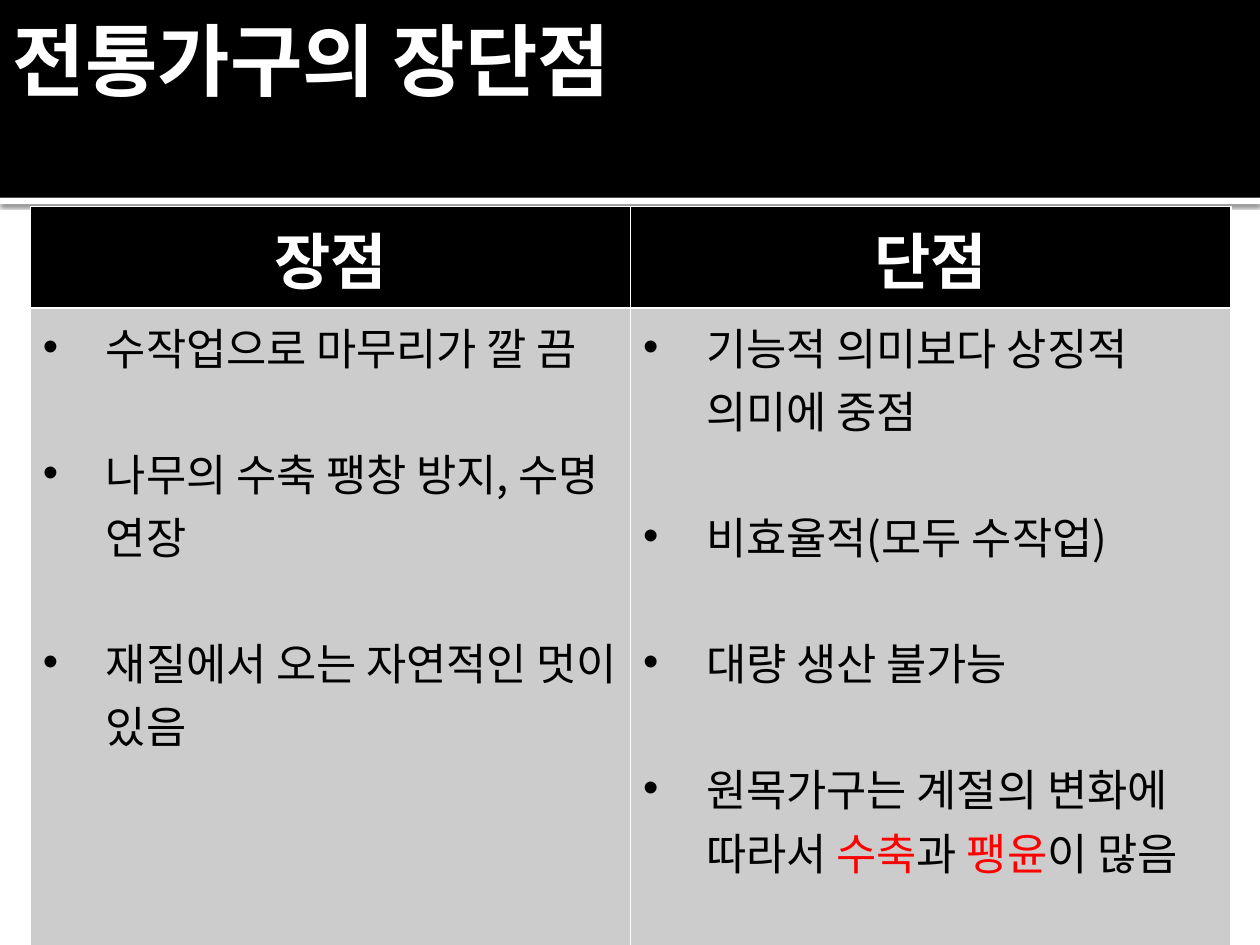
from lxml import etree
from pptx import Presentation
from pptx.dml.color import RGBColor
from pptx.enum.shapes import MSO_SHAPE
from pptx.enum.text import MSO_ANCHOR, MSO_AUTO_SIZE, PP_ALIGN
from pptx.oxml.ns import qn
from pptx.util import Inches, Pt

RECTANGLE = MSO_SHAPE.RECTANGLE
MIDDLE = MSO_ANCHOR.MIDDLE
NO_FIT = MSO_AUTO_SIZE.NONE
LEFT, CENTER = PP_ALIGN.LEFT, PP_ALIGN.CENTER

BLACK = RGBColor(0, 0, 0)
WHITE = RGBColor(255, 255, 255)
GRAY = RGBColor(0xCC, 0xCC, 0xCC)
RED = RGBColor(255, 0, 0)
FONT = "Noto Sans CJK KR"

TITLE_LAYOUT = 5
COLUMNS = [
    ("장점", [
        [("수작업으로 마무리가 깔 끔", BLACK)],
        [("나무의 수축 팽창 방지, 수명 연장", BLACK)],
        [("재질에서 오는 자연적인 멋이 있음", BLACK)],
    ]),
    ("단점", [
        [("기능적 의미보다 상징적 의미에 중점", BLACK)],
        [("비효율적(모두 수작업)", BLACK)],
        [("대량 생산 불가능", BLACK)],
        [("원목가구는 계절의 변화에 따라서 ", BLACK), ("수축", RED),
         ("과 ", BLACK), ("팽윤", RED), ("이 많음", BLACK)],
    ]),
]


def format_span(span, size, color, bold):
    """Set the font of a run for Latin and Korean letters."""
    font = span.font
    font.name, font.size, font.bold = FONT, Pt(size), bold
    font.color.rgb = color
    properties = span.font._element
    east_asian = etree.Element(qn("a:ea"), typeface=FONT)
    properties.find(qn("a:latin")).addnext(east_asian)


def add_bar(page, left, top, width, height, color):
    """Add a plain filled rectangle and return it."""
    bar = page.shapes.add_shape(RECTANGLE, left, top, width, height)
    bar.shadow.inherit = False
    bar.fill.solid()
    bar.fill.fore_color.rgb = color
    bar.line.fill.background()
    return bar


def add_shadow(bar):
    """Give a bar a soft shadow that falls downwards."""
    effects = bar.element.spPr.find(qn("a:effectLst"))
    shadow = etree.SubElement(
        effects, qn("a:outerShdw"), blurRad=str(Pt(2.5)), dist=str(Pt(0.8)),
        dir="5400000", algn="t", rotWithShape="0")
    color = etree.SubElement(shadow, qn("a:srgbClr"), val=str(BLACK))
    etree.SubElement(color, qn("a:alpha"), val="60000")


def add_header(page, left, top, width, height):
    """Draw the black band, the white strip under it and the title."""
    strip = add_bar(page, left, top + height, width, Inches(0.05), WHITE)
    add_shadow(strip)
    add_bar(page, left, top, width, height, BLACK)

    title = page.shapes.title
    page.shapes.element.append(title.element)
    title.left, title.top = left, top - Inches(0.16)
    title.width, title.height = Inches(5.35), Inches(1.25)
    frame = title.text_frame
    frame.text = "전통가구의 장단점"
    frame.word_wrap = True
    frame.auto_size = NO_FIT
    frame.vertical_anchor = MIDDLE
    frame.margin_left = Inches(0.1)
    frame.margin_right = frame.margin_top = frame.margin_bottom = Inches(0.05)
    para = frame.paragraphs[0]
    para.alignment = LEFT
    format_span(para.runs[0], 45, WHITE, True)


def add_bullet(para):
    """Give a paragraph a hanging round bullet."""
    properties = para._p.get_or_add_pPr()
    properties.set("marL", str(Inches(0.5)))
    properties.set("indent", str(-Inches(0.5)))
    etree.SubElement(properties, qn("a:buFont"), typeface="Arial")
    etree.SubElement(properties, qn("a:buChar"), char="•")


def fill_cell(cell, color):
    """Fill a cell with one colour."""
    cell.fill.solid()
    cell.fill.fore_color.rgb = color


def fill_points(cell, points):
    """Write the bulleted points, one blank line's height apart."""
    fill_cell(cell, GRAY)
    frame = cell.text_frame
    for index, point in enumerate(points):
        para = frame.add_paragraph() if index else frame.paragraphs[0]
        para.alignment = LEFT
        if index:
            para.space_before = Pt(36)
        add_bullet(para)
        for text, color in point:
            span = para.add_run()
            span.text = text
            format_span(span, 25, color, False)


def add_comparison(page, left, top, width, height):
    """Add the table of strengths and weaknesses."""
    table = page.shapes.add_table(
        2, len(COLUMNS), left, top, width, height).table
    table.rows[0].height = Inches(0.8)
    table.rows[1].height = height - Inches(0.8)
    for index, (heading, points) in enumerate(COLUMNS):
        cell = table.cell(0, index)
        fill_cell(cell, BLACK)
        cell.text_frame.text = heading
        para = cell.text_frame.paragraphs[0]
        para.alignment = CENTER
        format_span(para.runs[0], 35, WHITE, True)
        fill_points(table.cell(1, index), points)


def main():
    """Build the deck and save it."""
    deck = Presentation()
    deck.slide_width, deck.slide_height = Inches(10), Inches(7.5)
    page = deck.slides.add_slide(deck.slide_layouts[TITLE_LAYOUT])
    add_header(page, 0, 0, deck.slide_width, Inches(1.57))
    add_comparison(page, Inches(0.24), Inches(1.64), Inches(9.53), Inches(5.86))
    deck.save("out.pptx")


if __name__ == "__main__":
    main()
